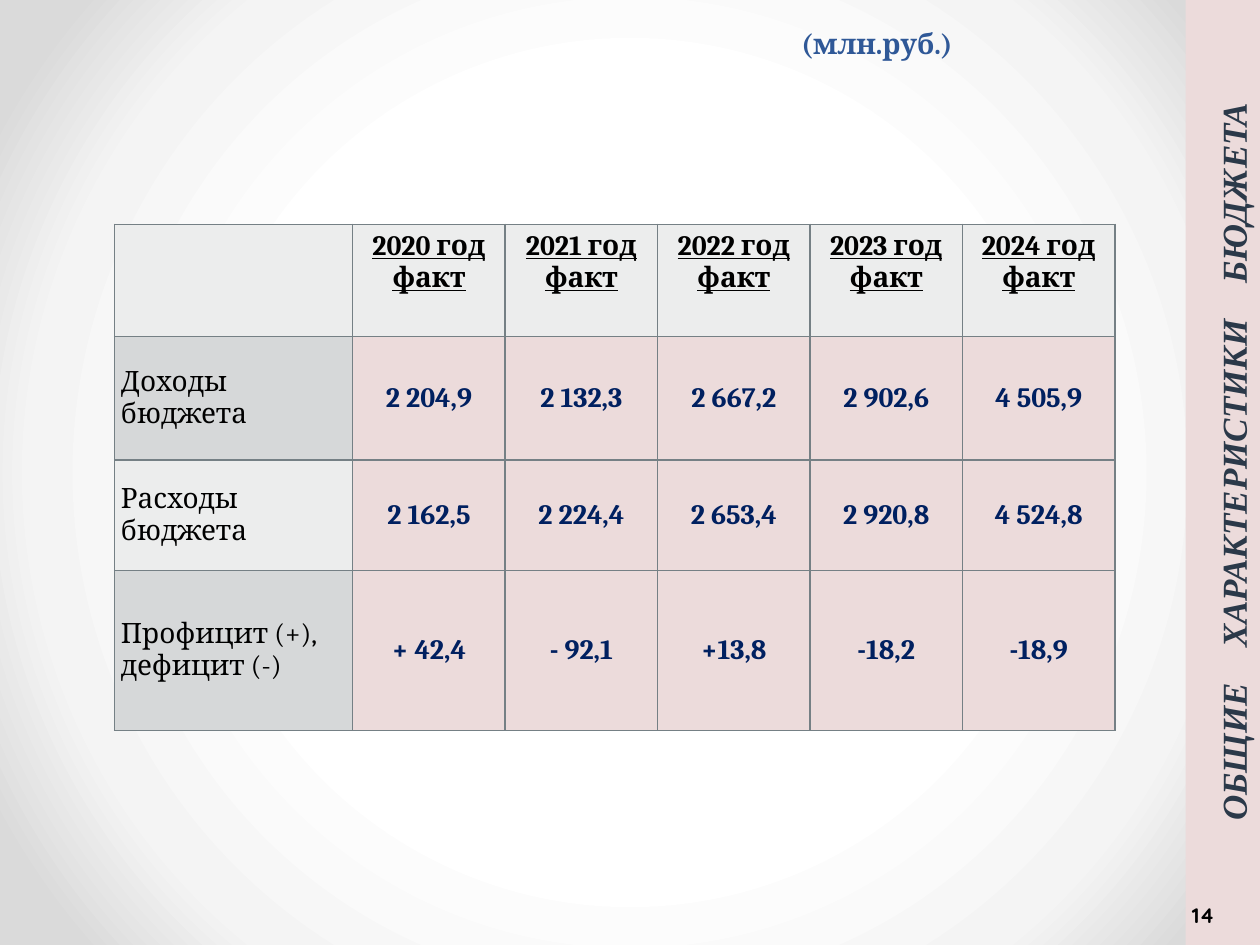
from lxml import etree
from pptx import Presentation
from pptx.dml.color import RGBColor
from pptx.enum.shapes import MSO_SHAPE
from pptx.enum.text import MSO_ANCHOR, PP_ALIGN
from pptx.oxml import parse_xml
from pptx.oxml.ns import nsdecls, qn
from pptx.util import Inches, Pt

COLORS = {
    "title": "2F5897", "black": "000000", "value": "002060",
    "border": "758085", "light": "ECEDED", "grey": "D6D8D9",
    "pink": "ECDBDB", "sidebar_text": "2B3949",
}
BACKGROUND = [(50, "FFFFFF"), (76, "F4F4F4"), (92, "DADADA")]
YEARS = ["2020", "2021", "2022", "2023", "2024"]
ROWS = [
    ("Доходы бюджета", ["2 204,9", "2 132,3", "2 667,2", "2 902,6", "4 505,9"]),
    ("Расходы бюджета", ["2 162,5", "2 224,4", "2 653,4", "2 920,8", "4 524,8"]),
    ("Профицит (+), дефицит (-)", ["+ 42,4", "- 92,1", "+13,8", "-18,2", "-18,9"]),
]
COL_WIDTHS = [1.89] + [1.21] * len(YEARS)
ROW_HEIGHTS = [0.89, 0.98, 0.88, 1.27]


def rgb(name):
    return RGBColor.from_string(COLORS[name])


def style(r, size, font, color, bold=False, italic=False, underline=False):
    f = r.font
    f.size, f.name, f.bold = Pt(size), font, bold
    f.italic, f.underline = italic, underline
    f.color.rgb = rgb(color)


def set_insets(tf, left, top, right, bottom):
    tf.margin_left, tf.margin_top = Inches(left), Inches(top)
    tf.margin_right, tf.margin_bottom = Inches(right), Inches(bottom)


def place(sp, left, top, width, height):
    sp.left, sp.top = Inches(left), Inches(top)
    sp.width, sp.height = Inches(width), Inches(height)


def add_background(s):
    stops = "".join(
        f'<a:gs pos="{pos * 1000}"><a:srgbClr val="{color}"/></a:gs>'
        for pos, color in BACKGROUND)
    s.element.cSld.insert(0, parse_xml(
        f'<p:bg {nsdecls("p", "a")}><p:bgPr><a:gradFill rotWithShape="1">'
        f'<a:gsLst>{stops}</a:gsLst><a:path path="circle">'
        '<a:fillToRect l="50000" t="50000" r="50000" b="50000"/></a:path>'
        '</a:gradFill><a:effectLst/></p:bgPr></p:bg>'))


def add_title(s, left, top, width, height):
    sp = s.shapes.title
    place(sp, left, top, width, height)
    tf = sp.text_frame
    tf.text = "(млн.руб.)"
    tf.vertical_anchor = MSO_ANCHOR.MIDDLE
    set_insets(tf, 0, 0, 0, 0)
    p = tf.paragraphs[0]
    p.alignment = PP_ALIGN.RIGHT
    style(p.runs[0], 16.2, "Cambria", "title", bold=True)


def add_borders(cell):
    tcPr = cell._tc.get_or_add_tcPr()
    for i, side in enumerate(("lnL", "lnR", "lnT", "lnB")):
        ln = etree.Element(qn(f"a:{side}"), w=str(Pt(1)))
        fill = etree.SubElement(ln, qn("a:solidFill"))
        etree.SubElement(fill, qn("a:srgbClr"), val=COLORS["border"])
        tcPr.insert(i, ln)


def fill_cell(cell, text, fill, color="black", align=PP_ALIGN.CENTER,
              anchor=MSO_ANCHOR.MIDDLE, bold=True, underline=False):
    cell.fill.solid()
    cell.fill.fore_color.rgb = rgb(fill)
    cell.vertical_anchor = anchor
    set_insets(cell, 0.05, 0.05, 0.05, 0.05)
    add_borders(cell)
    cell.text_frame.text = text
    for p in cell.text_frame.paragraphs:
        p.alignment = align
        for r in p.runs:
            style(r, 16, "Cambria", color, bold, underline=underline)


def add_budget_table(s, left, top):
    table = s.shapes.add_table(
        len(ROW_HEIGHTS), len(COL_WIDTHS), Inches(left), Inches(top),
        Inches(sum(COL_WIDTHS)), Inches(sum(ROW_HEIGHTS))).table
    for col, width in zip(table.columns, COL_WIDTHS):
        col.width = Inches(width)
    for row, height in zip(table.rows, ROW_HEIGHTS):
        row.height = Inches(height)
    fill_cell(table.cell(0, 0), "", "light")
    for c, year in enumerate(YEARS, 1):
        fill_cell(table.cell(0, c), f"{year} год\nфакт", "light",
                  anchor=MSO_ANCHOR.TOP, underline=True)
    for r, (label, values) in enumerate(ROWS, 1):
        fill_cell(table.cell(r, 0), label, "grey" if r % 2 else "light",
                  align=PP_ALIGN.LEFT, bold=False)
        for c, value in enumerate(values, 1):
            fill_cell(table.cell(r, c), value, "pink", "value")


def add_sidebar(s, left, top, width, height):
    sp = s.shapes.add_shape(
        MSO_SHAPE.RECTANGLE, Inches(left + (width - height) / 2),
        Inches(top + (height - width) / 2), Inches(height), Inches(width))
    sp.rotation = 270
    sp.shadow.inherit = False
    sp.fill.solid()
    sp.fill.fore_color.rgb = rgb("pink")
    sp.line.fill.background()
    tf = sp.text_frame
    tf.word_wrap = True
    tf.vertical_anchor = MSO_ANCHOR.BOTTOM
    set_insets(tf, 0.22, 0, 0.05, 0.05)
    p = tf.paragraphs[0]
    p.alignment = PP_ALIGN.CENTER
    for text in ("ОБЩИЕ", " ", "ХАРАКТЕРИСТИКИ", " ", "БЮДЖЕТА"):
        r = p.add_run()
        r.text = text
        style(r, 20, "Times New Roman", "sidebar_text", bold=True, italic=True)
        if text == " ":
            r.font._element.set("spc", "1500")


def add_page_number(s, left, top, width, height):
    sp = s.shapes.add_textbox(*map(Inches, (left, top, width, height)))
    tf = sp.text_frame
    tf.word_wrap = True
    tf.vertical_anchor = MSO_ANCHOR.MIDDLE
    set_insets(tf, 0.05, 0.05, 0.05, 0.05)
    tf.text = "14"
    style(tf.paragraphs[0].runs[0], 12, "Quicksand", "black", bold=True)


def main():
    prs = Presentation()
    prs.slide_width, prs.slide_height = Inches(10), Inches(7.5)
    s = prs.slides.add_slide(prs.slide_layouts[5])
    add_background(s)
    add_title(s, 5.16, 0.19, 2.4, 0.3)
    add_budget_table(s, 0.91, 1.78)
    add_sidebar(s, 9.41, 0, 0.59, 7.5)
    add_page_number(s, 9.41, 7.14, 0.59, 0.25)
    prs.save("out.pptx")


if __name__ == "__main__":
    main()
